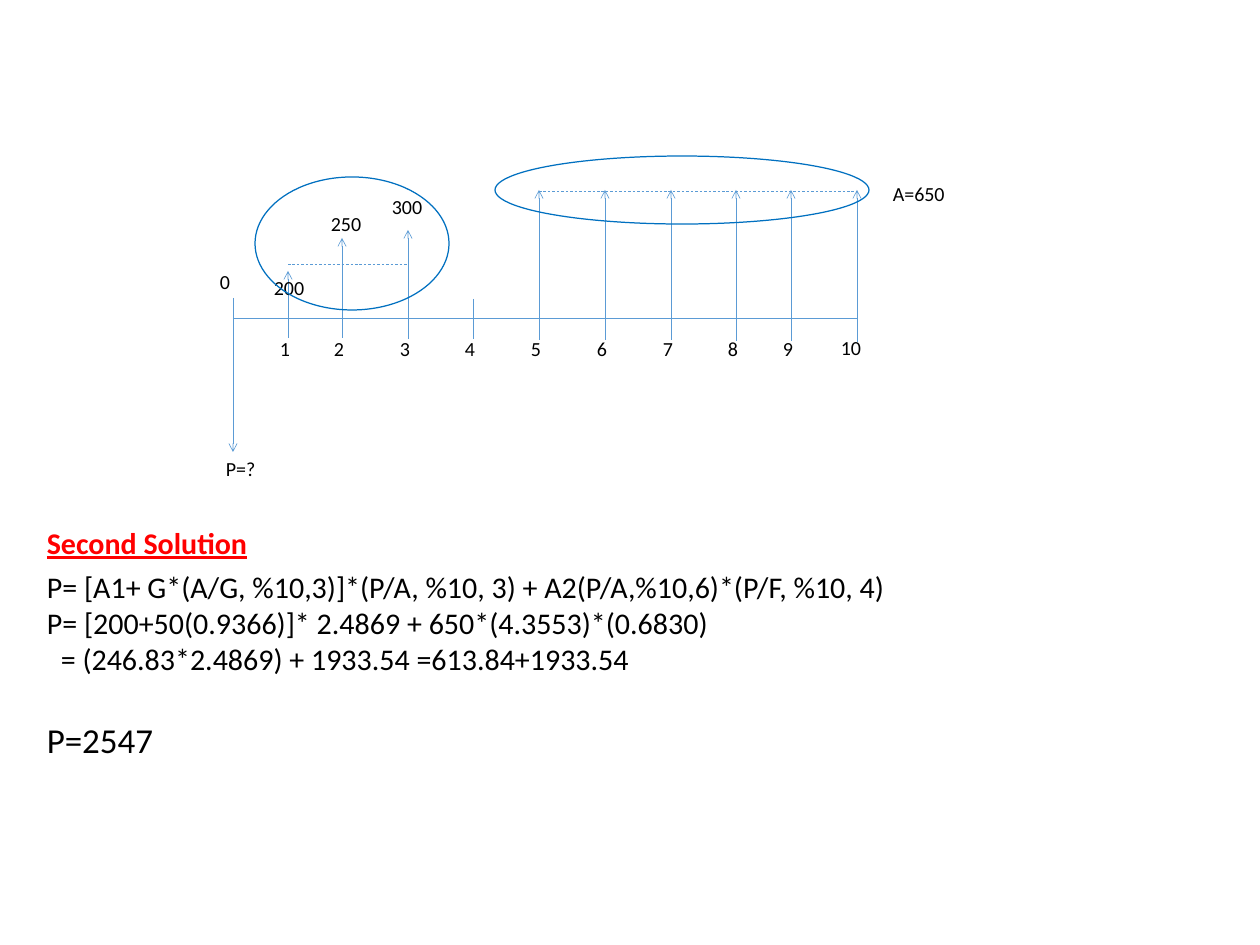
"""Build the cash flow diagram slide with its second solution."""
from dataclasses import dataclass

from lxml import etree
from pptx import Presentation
from pptx import util as u
from pptx.dml.color import RGBColor
from pptx.enum import dml, shapes, text
from pptx.oxml.ns import qn


@dataclass(frozen=True)
class Theme:
    font: str = "Calibri"
    ink: str = "000000"
    heading: str = "FF0000"
    axis: str = "5B9BD5"
    ring: str = "0070C0"
    label_pt: int = 16
    body_pt: int = 24
    result_pt: int = 28
    axis_pt: float = 0.5
    ring_pt: float = 1


THEME = Theme()
PX = u.Inches(1) // 90
WIDTH, HEIGHT = 1260, 945
AXIS_Y, TICK_TOP, TICK_LENGTH = 318, 298, 40
YEAR_LABEL_Y, YEAR_LABEL_SHIFT, LABEL_HEIGHT = 332, 17, 33

YEAR_X = [233, 288, 342, 408, 473, 539, 605, 671, 736, 791, 857]
ARROW_TIPS = {0: 452, 1: 271, 2: 238, 3: 230} | {year: 190 for year in range(5, 11)}
DASHES = [(5, 10, 191), (1, 3, 264)]
RINGS = [(255, 177, 194, 133), (495, 156, 374, 68)]
LABELS = [
    ("200", 265, 271, 66),
    ("250", 322, 207, 66),
    ("300", 383, 190, 66),
    ("A=650", 884, 177, 98),
    ("0", 211, 265, 32),
    ("10", 832, 331, 55),
    ("P=?", 217, 452, 87),
]
HEADING = "Second Solution"
SOLUTION = [
    ("P= [A1+ G*(A/G, %10,3)]*(P/A, %10, 3) + A2(P/A,%10,6)*(P/F, %10, 4)", THEME.body_pt, 0, 0),
    ("P= [200+50(0.9366)]* 2.4869 + 650*(4.3553)*(0.6830)", THEME.body_pt, 0, 0),
    ("= (246.83*2.4869) + 1933.54 =613.84+1933.54", THEME.body_pt, 14, 0),
    ("P=2547", THEME.result_pt, 0, 34),
]


def add_line(s, x1, y1, x2, y2, arrow=False, dash=False):
    line = s.shapes.add_connector(
        shapes.MSO_CONNECTOR.STRAIGHT, x1 * PX, y1 * PX, x2 * PX, y2 * PX)
    line.line.color.rgb = RGBColor.from_string(THEME.axis)
    line.line.width = u.Pt(THEME.axis_pt)
    if dash:
        line.line.dash_style = dml.MSO_LINE.DASH
    sp_pr = line._element.spPr
    if arrow:
        etree.SubElement(sp_pr.find(qn("a:ln")), qn("a:tailEnd"), type="arrow")
    etree.SubElement(sp_pr, qn("a:effectLst"))


def add_text(s, x, y, w, h, lines, color=THEME.ink, bold=None, underline=None):
    tf = s.shapes.add_textbox(x * PX, y * PX, w * PX, h * PX).text_frame
    tf.word_wrap = True
    tf.auto_size = text.MSO_AUTO_SIZE.SHAPE_TO_FIT_TEXT
    for i, (words, size, indent, before) in enumerate(lines):
        p = tf.add_paragraph() if i else tf.paragraphs[0]
        p.text = words
        p.font.name, p.font.size = THEME.font, u.Pt(size)
        p.font.color.rgb = RGBColor.from_string(color)
        p.font.bold, p.font.underline = bold, underline
        if before:
            p.space_before = u.Pt(before)
        if indent:
            p._p.get_or_add_pPr().set("marL", str(indent * PX))


def add_label(s, words, x, y, w):
    add_text(s, x, y, w, LABEL_HEIGHT, [(words, THEME.label_pt, 0, 0)])


def add_ring(s, x, y, w, h):
    sp = s.shapes.add_shape(shapes.MSO_SHAPE.OVAL, x * PX, y * PX, w * PX, h * PX)
    sp.shadow.inherit = False
    sp.fill.background()
    sp.line.color.rgb = RGBColor.from_string(THEME.ring)
    sp.line.width = u.Pt(THEME.ring_pt)


def main():
    prs = Presentation()
    prs.slide_width, prs.slide_height = WIDTH * PX, HEIGHT * PX
    s = prs.slides.add_slide(prs.slide_layouts[6])

    add_text(s, 38, 564, 1260, 330, SOLUTION)
    add_text(s, 38, 520, 1100, 45, [(HEADING, THEME.body_pt, 0, 0)],
             THEME.heading, bold=True, underline=True)

    add_line(s, YEAR_X[0], AXIS_Y, YEAR_X[-1], AXIS_Y)
    for year, x in enumerate(YEAR_X):
        top = TICK_TOP + 2 * year // 5
        add_line(s, x, top, x, top + TICK_LENGTH)
    for year, tip in ARROW_TIPS.items():
        add_line(s, YEAR_X[year], AXIS_Y, YEAR_X[year], tip, arrow=True)
    for first, last, y in DASHES:
        add_line(s, YEAR_X[first], y, YEAR_X[last], y, dash=True)

    for label in LABELS:
        add_label(s, *label)
    for year in range(1, 10):
        add_label(s, str(year), YEAR_X[year] - YEAR_LABEL_SHIFT, YEAR_LABEL_Y, 32)
    for ring in RINGS:
        add_ring(s, *ring)

    prs.save("out.pptx")


if __name__ == "__main__":
    main()
